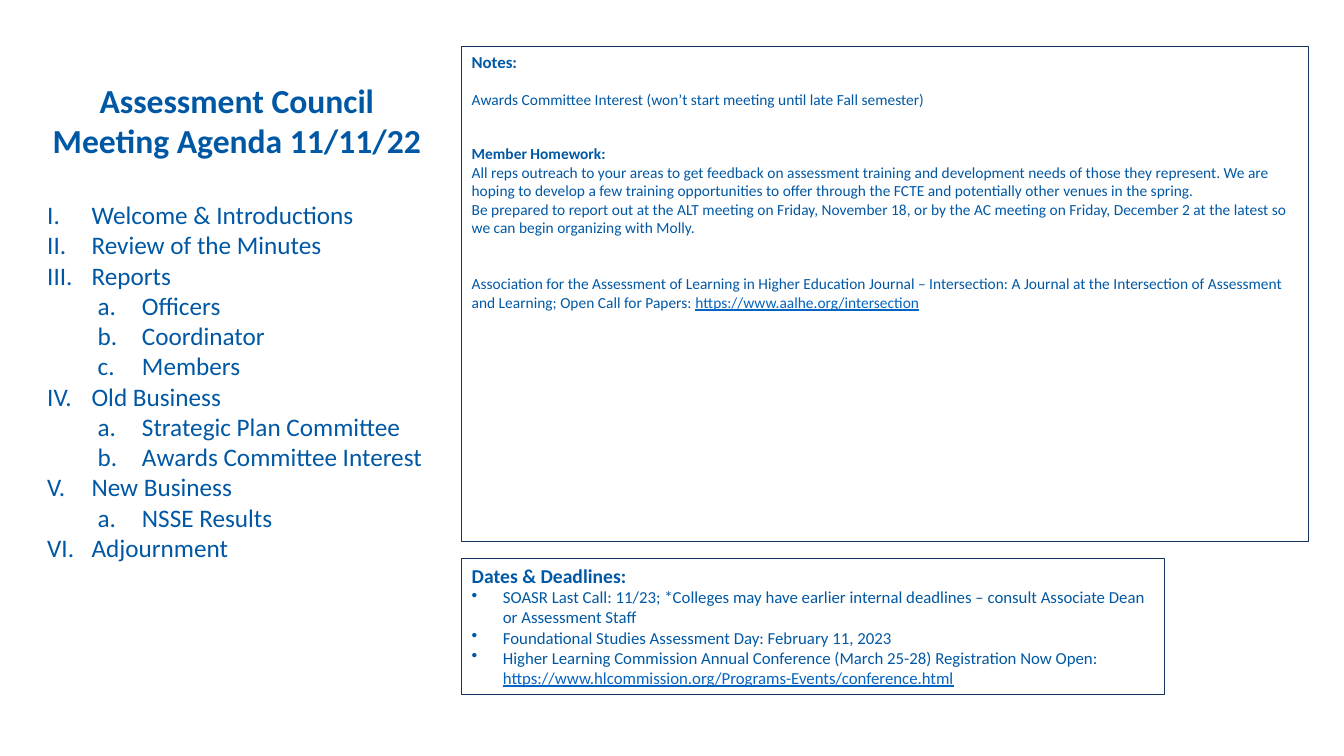
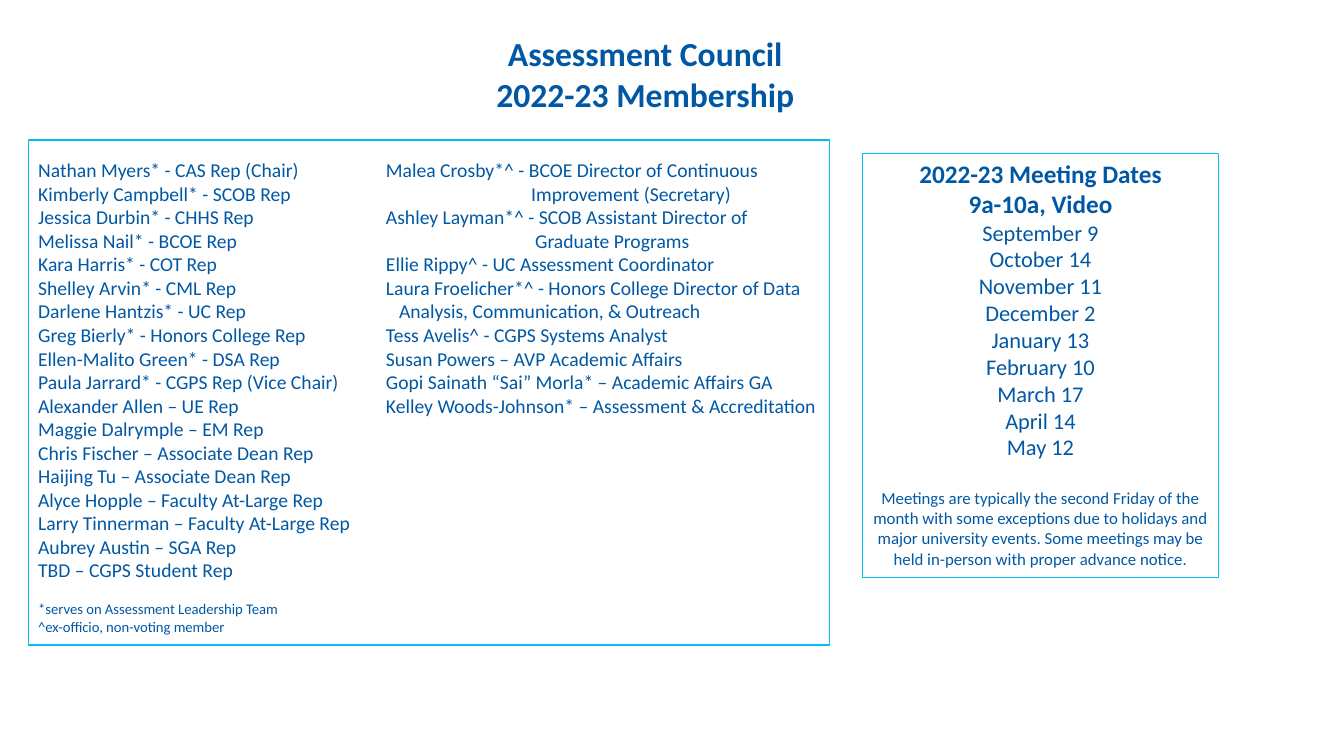
from dataclasses import dataclass

import pptx
import pptx.dml.color
import pptx.enum.shapes
import pptx.enum.text
import pptx.oxml.ns
import pptx.util
from lxml import etree
from pptx.util import Inches, Pt


class Theme:
    font = "Calibri"
    text, link = "0058A4", "0563C1"
    navy, cyan, white = "14325B", "00BFF0", "FFFFFF"
    title, agenda, date, body, detail, note, footnote = 24, 18, 16, 14, 12, 11, 10.5


@dataclass
class Line:
    text: str
    size: float
    bold: bool = False
    gap: float = 0  # points of space before
    marker: str = ""
    level: int = 0
    hang: float = 0  # inches
    link: str = ""


AGENDA_TITLE = ["Assessment Council", "Meeting Agenda 11/11/22"]
AGENDA = [
    ("Welcome & Introductions", []),
    ("Review of the Minutes", []),
    ("Reports", ["Officers", "Coordinator", "Members"]),
    ("Old Business", ["Strategic Plan Committee", "Awards Committee Interest"]),
    ("New Business", ["NSSE Results"]),
    ("Adjournment", []),
]
NOTES = [
    Line("Notes:", Theme.detail, bold=True),
    Line("Awards Committee Interest (won’t start meeting until late Fall semester)",
         Theme.note, gap=13.4),
    Line("Member Homework:", Theme.note, bold=True, gap=25.6),
    Line("All reps outreach to your areas to get feedback on assessment training and "
         "development needs of those they represent. We are hoping to develop a few "
         "training opportunities to offer through the FCTE and potentially other venues "
         "in the spring.", Theme.note),
    Line("Be prepared to report out at the ALT meeting on Friday, November 18, or by the "
         "AC meeting on Friday, December 2 at the latest so we can begin organizing with "
         "Molly.", Theme.note),
    Line("Association for the Assessment of Learning in Higher Education Journal – "
         "Intersection: A Journal at the Intersection of Assessment and Learning; Open "
         "Call for Papers: ", Theme.note, gap=26.8,
         link="https://www.aalhe.org/intersection"),
]
DEADLINES_HEADING = "Dates & Deadlines:"
DEADLINES = [
    ("SOASR Last Call: 11/23; *Colleges may have earlier internal deadlines – consult "
     "Associate Dean or Assessment Staff", ""),
    ("Foundational Studies Assessment Day: February 11, 2023", ""),
    ("Higher Learning Commission Annual Conference (March 25-28) Registration Now Open: ",
     "https://www.hlcommission.org/Programs-Events/conference.html"),
]

MEMBERSHIP_TITLE = ["Assessment Council", "2022-23 Membership"]
REPRESENTATIVES = [
    "Nathan Myers* - CAS Rep (Chair)",
    "Kimberly Campbell* - SCOB Rep",
    "Jessica Durbin* - CHHS Rep",
    "Melissa Nail* - BCOE Rep",
    "Kara Harris* - COT Rep",
    "Shelley Arvin* - CML Rep",
    "Darlene Hantzis* - UC Rep",
    "Greg Bierly* - Honors College Rep",
    "Ellen-Malito Green* - DSA Rep",
    "Paula Jarrard* - CGPS Rep (Vice Chair)",
    "Alexander Allen – UE Rep",
    "Maggie Dalrymple – EM Rep",
    "Chris Fischer – Associate Dean Rep",
    "Haijing Tu – Associate Dean Rep",
    "Alyce Hopple – Faculty At-Large Rep",
    "Larry Tinnerman – Faculty At-Large Rep",
    "Aubrey Austin – SGA Rep",
    "TBD – CGPS Student Rep",
]
FOOTNOTES = ["*serves on Assessment Leadership Team", "^ex-officio, non-voting member"]
# Text and the indent of its second line; \v breaks the line.
STAFF = [
    ("Malea Crosby*^ - BCOE Director of Continuous\vImprovement (Secretary)", 1.44),
    ("Ashley Layman*^ - SCOB Assistant Director of\vGraduate Programs", 1.48),
    ("Ellie Rippy^ - UC Assessment Coordinator", 0),
    ("Laura Froelicher*^ - Honors College Director of Data\v"
     "Analysis, Communication, & Outreach", 0.13),
    ("Tess Avelis^ - CGPS Systems Analyst", 0),
    ("Susan Powers – AVP Academic Affairs", 0),
    ("Gopi Sainath “Sai” Morla* – Academic Affairs GA", 0),
    ("Kelley Woods-Johnson* – Assessment & Accreditation", 0),
]
MEETING_HEADING = ["2022-23 Meeting Dates", "9a-10a, Video"]
MEETING_DATES = ["September 9", "October 14", "November 11", "December 2", "January 13",
                 "February 10", "March 17", "April 14", "May 12"]
MEETING_NOTE = ("Meetings are typically the second Friday of the month with some exceptions "
                "due to holidays and major university events. Some meetings may be held "
                "in-person with proper advance notice.")


def rgb(value):
    return pptx.dml.color.RGBColor.from_string(value)


def set_marker(paragraph, marker):
    """Give the paragraph a bullet character or an automatic number scheme."""
    properties = paragraph._p.get_or_add_pPr()
    tag, attribute = ("a:buChar", "char") if marker == "•" else ("a:buAutoNum", "type")
    bullet = etree.SubElement(properties, pptx.oxml.ns.qn(tag))
    bullet.set(attribute, marker)


def write(frame, lines, centered=False):
    frame.word_wrap = True
    frame.vertical_anchor = pptx.enum.text.MSO_ANCHOR.TOP
    align = pptx.enum.text.PP_ALIGN
    for index, line in enumerate(lines):
        paragraph = frame.add_paragraph() if index else frame.paragraphs[0]
        paragraph.text = line.text
        paragraph.alignment = align.CENTER if centered else align.LEFT
        paragraph.level = line.level
        if line.gap:
            paragraph.space_before = Pt(line.gap)
        if line.hang:
            properties = paragraph._p.get_or_add_pPr()
            properties.set("marL", str(Inches(line.hang + 0.5 * line.level)))
            properties.set("indent", str(-Inches(line.hang)))
        if line.marker:
            set_marker(paragraph, line.marker)
        font = paragraph.font
        font.name, font.size, font.bold = Theme.font, Pt(line.size), line.bold
        font.color.rgb = rgb(Theme.text)
        if line.link:
            address = paragraph.add_run()
            address.text = line.link
            address.font.underline = True
            address.font.color.rgb = rgb(Theme.link)


def add_text(slide, at, lines, centered=False):
    box = slide.shapes.add_textbox(*map(Inches, at))
    write(box.text_frame, lines, centered)


def add_panel(slide, at, outline, lines=(), weight=0.75, fill=None, centered=False):
    panel = slide.shapes.add_shape(
        pptx.enum.shapes.MSO_SHAPE.RECTANGLE, *map(Inches, at))
    panel.shadow.inherit = False
    if fill:
        panel.fill.solid()
        panel.fill.fore_color.rgb = rgb(fill)
    else:
        panel.fill.background()
    panel.line.color.rgb = rgb(outline)
    panel.line.width = Pt(weight)
    write(panel.text_frame, lines, centered)


def add_title(slide, at, title):
    add_text(slide, at, [Line(text, Theme.title, bold=True) for text in title], True)


def build_agenda(slide):
    items = []
    for topic, subtopics in AGENDA:
        items.append(Line(topic, Theme.agenda, marker="romanUcPeriod", hang=0.44))
        items += [Line(subtopic, Theme.agenda, marker="alphaLcPeriod", level=1, hang=0.44)
                  for subtopic in subtopics]
    add_text(slide, (0.37, 1.93, 3.96, 3.74), items)
    add_title(slide, (-0.12, 0.74, 4.94, 0.91), AGENDA_TITLE)
    add_panel(slide, (4.58, 0.46, 8.4, 4.91), Theme.navy, NOTES)
    deadlines = [Line(DEADLINES_HEADING, Theme.body, bold=True)]
    deadlines += [Line(text, Theme.detail, marker="•", hang=0.31, link=link)
                  for text, link in DEADLINES]
    add_panel(slide, (4.58, 5.54, 6.97, 1.35), Theme.navy, deadlines)


def build_membership(slide):
    add_panel(slide, (0.28, 1.39, 7.95, 5.01), Theme.cyan, weight=1, fill=Theme.white)
    members = [Line(text, Theme.body) for text in REPRESENTATIVES]
    members += [Line(text, Theme.footnote, gap=0 if index else 12.8)
                for index, text in enumerate(FOOTNOTES)]
    add_text(slide, (0.28, 1.52, 4.42, 5.05), members)
    add_title(slide, (1.81, 0.28, 9.18, 0.91), MEMBERSHIP_TITLE)
    meetings = [Line(text, Theme.agenda, bold=True) for text in MEETING_HEADING]
    meetings += [Line(text, Theme.date) for text in MEETING_DATES]
    meetings.append(Line(MEETING_NOTE, Theme.detail, gap=19.5))
    add_panel(slide, (8.55, 1.52, 3.54, 4.21), Theme.cyan, meetings, centered=True)
    add_text(slide, (3.73, 1.52, 4.5, 3.16),
             [Line(text, Theme.body, hang=hang) for text, hang in STAFF])


def main():
    deck = pptx.Presentation()
    deck.slide_width, deck.slide_height = Inches(13.33), Inches(7.5)
    for build in (build_agenda, build_membership):
        build(deck.slides.add_slide(deck.slide_layouts[6]))
    deck.save("out.pptx")


if __name__ == "__main__":
    main()
